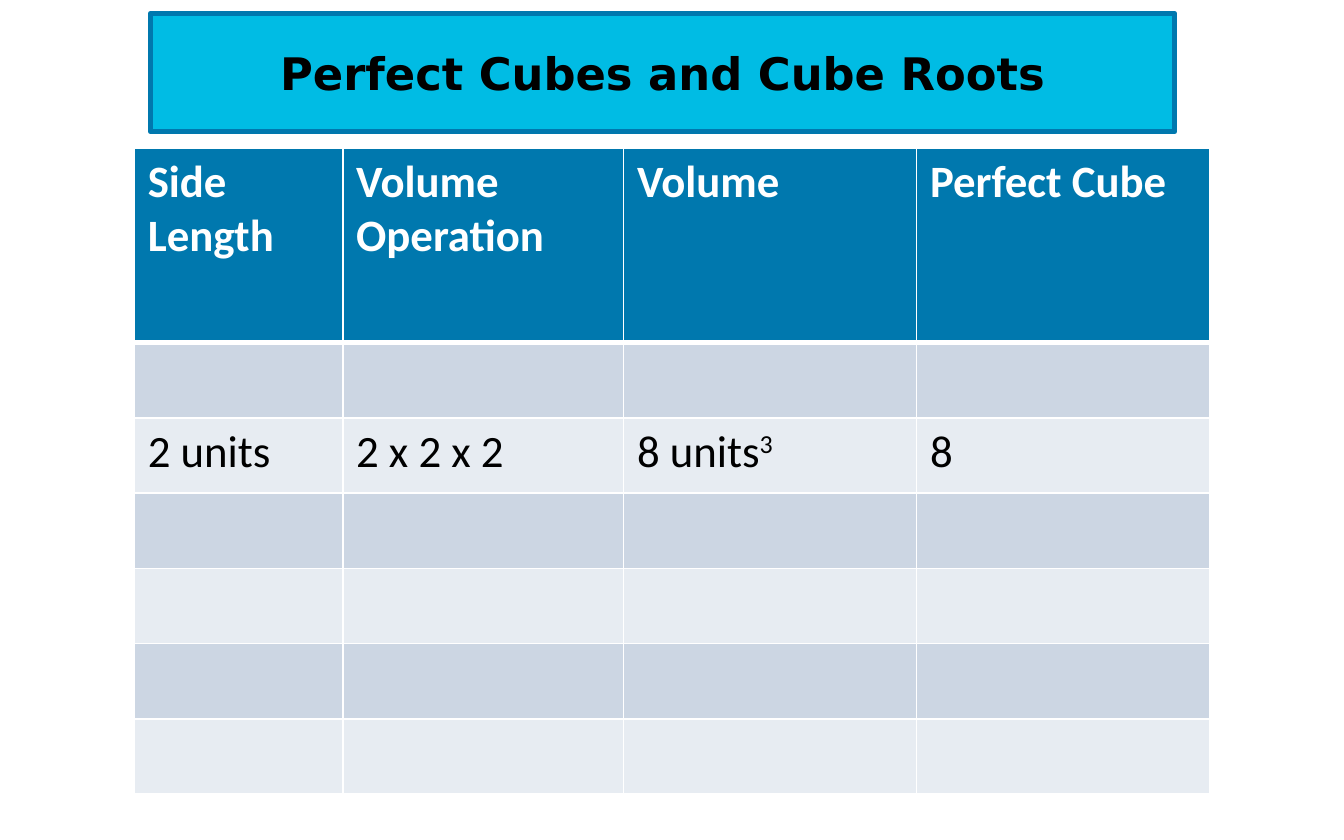
"""Build a slide with a table of perfect cubes and cube roots."""
from dataclasses import dataclass

from lxml import etree
from pptx import Presentation
from pptx import util as u
from pptx.dml.color import RGBColor
from pptx.enum import text
from pptx.oxml import ns


@dataclass(frozen=True)
class Theme:
    title_fill: str = "00BCE4"
    accent: str = "0078AE"
    bands: tuple = ("CCD6E3", "E7ECF2")
    light: str = "FFFFFF"
    dark: str = "000000"
    title_font: str = "DejaVu Sans"
    body_font: str = "Calibri"
    size: int = 24
    frame: int = 3
    rule: int = 1


class Deck:
    def __init__(self, theme, width, height):
        self.theme = theme
        self.prs = Presentation()
        self.prs.slide_width, self.prs.slide_height = u.Inches(width), u.Inches(height)
        self.s = self.prs.slides.add_slide(self.prs.slide_layouts[5])

    def x(self, cols):
        return round(self.prs.slide_width * cols / 100)

    def y(self, rows):
        return round(self.prs.slide_height * rows / 100)

    def run(self, p, words, color, **formats):
        r = p.add_run()
        r.text = words
        for key, value in {"size": u.Pt(self.theme.size), **formats}.items():
            setattr(r.font, key, value)
        r.font.color.rgb = RGBColor.from_string(color)
        return r

    def paint(self, target, color):
        target.fill.solid()
        target.fill.fore_color.rgb = RGBColor.from_string(color)

    def title(self, words, left, top, width, height):
        t, sp = self.theme, self.s.shapes.title
        box = {"left": self.x(left), "top": self.y(top),
               "width": self.x(width), "height": self.y(height)}
        for key, value in box.items():
            setattr(sp, key, value)
        self.paint(sp, t.title_fill)
        sp.line.color.rgb = RGBColor.from_string(t.accent)
        sp.line.width = u.Pt(t.frame)
        tf = sp.text_frame
        formats = {"word_wrap": True, "auto_size": text.MSO_AUTO_SIZE.NONE,
                   "vertical_anchor": text.MSO_ANCHOR.MIDDLE}
        for key, value in formats.items():
            setattr(tf, key, value)
        p = tf.paragraphs[0]
        p.alignment = text.PP_ALIGN.CENTER
        self.run(p, words, t.dark, name=t.title_font, bold=True)

    def borders(self, cell, **widths):
        tc_pr = cell._tc.get_or_add_tcPr()
        for side in ("L", "R", "T", "B"):
            width = widths.get(side, self.theme.rule)
            ln = etree.SubElement(tc_pr, ns.qn(f"a:ln{side}"), w=str(u.Pt(width)))
            fill = etree.SubElement(ln, ns.qn("a:solidFill"))
            etree.SubElement(fill, ns.qn("a:srgbClr"), val=self.theme.light)

    def table(self, rows, left, top, widths, heights):
        t = self.theme
        frame = self.s.shapes.add_table(len(heights), len(widths), self.x(left), self.y(top),
                                        self.x(sum(widths)), self.y(sum(heights)))
        table = frame.table
        for column, width in zip(table.columns, widths):
            column.width = self.x(width)
        for i, height in enumerate(heights):
            table.rows[i].height = self.y(height)
            head = i == 0
            edges = {"B": t.frame} if head else {"T": t.frame} if i == 1 else {}
            for j in range(len(widths)):
                cell = table.cell(i, j)
                self.borders(cell, **edges)
                self.paint(cell, t.accent if head else t.bands[(i - 1) % 2])
                words, _, power = rows.get(i, [""] * len(widths))[j].partition("^")
                p = cell.text_frame.paragraphs[0]
                style = {"color": t.light if head else t.dark,
                         "name": t.body_font, "bold": head}
                if words:
                    self.run(p, words, **style)
                if power:
                    self.run(p, power, **style).font._element.set("baseline", "30000")


def main():
    deck = Deck(Theme(), 10, 6.25)
    deck.title("Perfect Cubes and Cube Roots", 11.2, 1.6, 76.2, 14.08)
    rows = {
        0: ["Side Length", "Volume Operation", "Volume", "Perfect Cube"],
        2: ["2 units", "2 x 2 x 2", "8 units^3", "8"],
    }
    deck.table(rows, 10, 17.6, [15.5, 20.9, 21.8, 21.8], [23.2] + [8.96] * 6)
    deck.prs.save("out.pptx")


if __name__ == "__main__":
    main()
